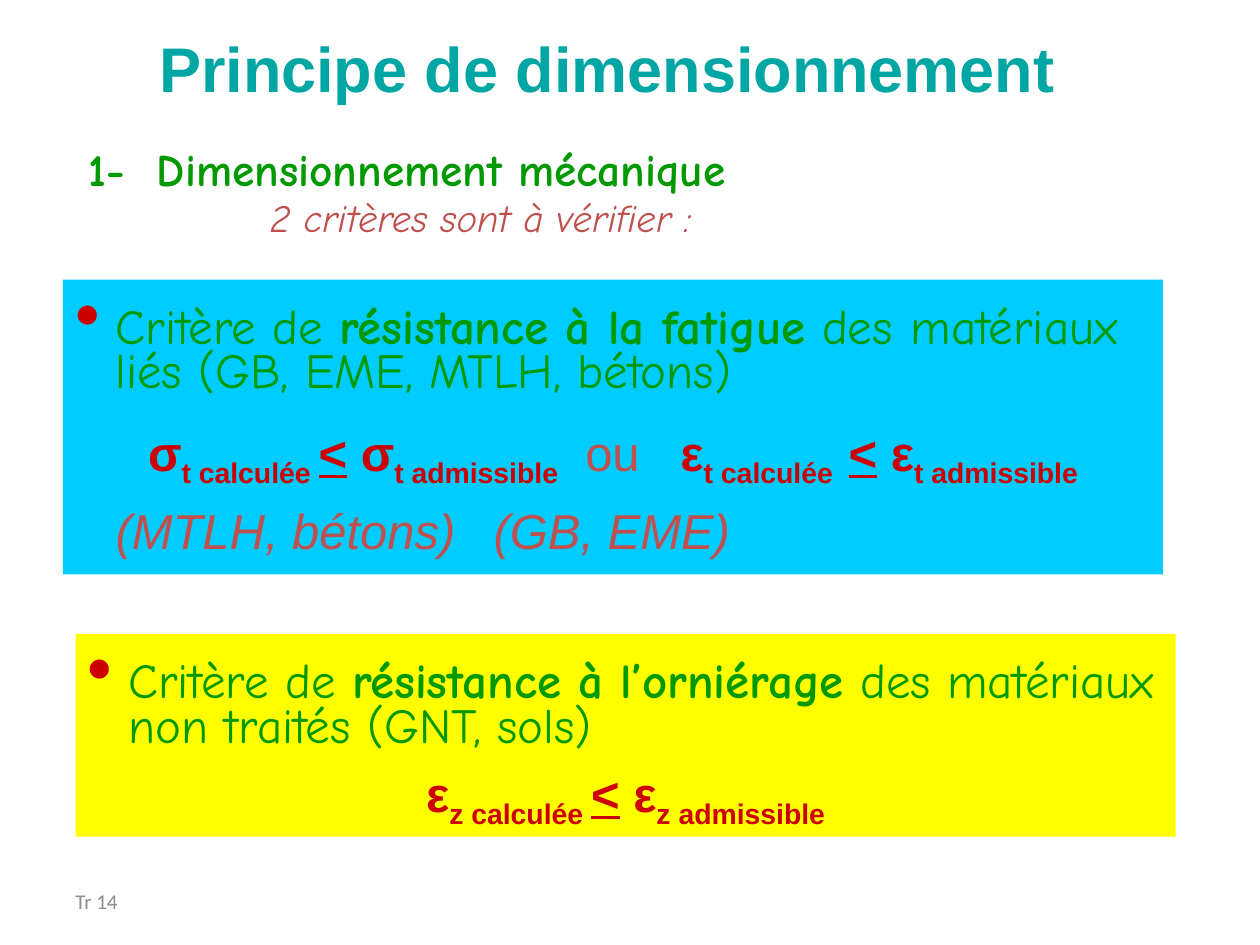
import dataclasses

import pptx
import pptx.dml.color
import pptx.enum.shapes
import pptx.enum.text
import pptx.oxml
import pptx.oxml.ns
import pptx.util

Pt = pptx.util.Pt
Align = pptx.enum.text.PP_ALIGN
Anchor = pptx.enum.text.MSO_ANCHOR


@dataclasses.dataclass(frozen=True)
class Theme:
    teal: str = "00A6A4"
    green: str = "009900"
    red: str = "CC0000"
    brick: str = "C0504D"
    grey: str = "8C8C8C"
    blue_panel: str = "00CCFF"
    yellow_panel: str = "FFFF00"
    heading_font: str = "Arial"
    text_font: str = "Comic Neue"
    footer_font: str = "Calibri"
    title_size: float = 36
    section_size: float = 25.9
    note_size: float = 22.2
    text_size: float = 28
    footer_size: float = 12


class SlideBuilder:
    def __init__(self, slide, theme):
        self.slide = slide
        self.theme = theme

    @staticmethod
    def color(value):
        return pptx.dml.color.RGBColor.from_string(value)

    @staticmethod
    def place(shape, left, top, width, height):
        shape.left, shape.top = Pt(left), Pt(top)
        shape.width, shape.height = Pt(width), Pt(height)

    @staticmethod
    def frame(shape, anchor=Anchor.TOP, inset_top=3.6, inset_side=7.2):
        frame = shape.text_frame
        frame.word_wrap = True
        frame.auto_size = pptx.enum.text.MSO_AUTO_SIZE.NONE
        frame.vertical_anchor = anchor
        frame.margin_left = frame.margin_right = Pt(inset_side)
        frame.margin_top, frame.margin_bottom = Pt(inset_top), Pt(3.6)
        return frame

    def paragraph(self, frame, align=Align.LEFT, spacing=1.0, before=0,
                  margin=0, hanging=0, bullet=False, tab=None):
        """Start a paragraph, reusing the empty first one."""
        first = frame.paragraphs[0]
        paragraph = frame.add_paragraph() if first.runs else first
        paragraph.alignment = align
        paragraph.line_spacing = spacing
        paragraph.space_before = Pt(before)
        properties = paragraph._p.get_or_add_pPr()
        properties.set("marL", str(Pt(margin)))
        properties.set("indent", str(-Pt(hanging)))
        marks = ["<a:buNone {0}/>"]
        if bullet:
            marks = ['<a:buClr {0}><a:srgbClr val="%s"/></a:buClr>' % self.theme.red,
                     '<a:buSzPct {0} val="150000"/>', '<a:buChar {0} char="•"/>']
        if tab:
            marks.append('<a:tabLst {0}><a:tab pos="%d" algn="l"/></a:tabLst>' % Pt(tab))
        for mark in marks:
            properties.append(pptx.oxml.parse_xml(mark.format(pptx.oxml.ns.nsdecls("a"))))
        return paragraph

    def run(self, paragraph, text, font, size, color, bold=False, italic=False,
            underline=False, subscript=False):
        run = paragraph.add_run()
        run.text = text
        run.font.name, run.font.size = font, Pt(size)
        run.font.color.rgb = self.color(color)
        run.font.bold, run.font.italic = bold, italic
        run.font.underline = underline
        if subscript:
            run._r.get_or_add_rPr().set("baseline", "-25000")

    def title(self, text):
        theme = self.theme
        shape = self.slide.shapes.title
        self.place(shape, 23, 9.4, 648, 90)
        paragraph = self.paragraph(self.frame(shape, inset_top=7.2), Align.CENTER)
        self.run(paragraph, text, theme.heading_font, theme.title_size, theme.teal, bold=True)

    def section(self, heading, note):
        theme = self.theme
        shape = self.slide.placeholders[1]
        self.place(shape, 43.2, 82.8, 617.8, 61.2)
        frame = self.frame(shape)
        paragraph = self.paragraph(frame, spacing=0.8)
        self.run(paragraph, heading, theme.text_font, theme.section_size, theme.green, bold=True)
        paragraph = self.paragraph(frame, spacing=0.8, before=4.4, margin=104)
        self.run(paragraph, note, theme.text_font, theme.note_size, theme.brick, italic=True)

    def panel(self, left, top, height, fill):
        shape = self.slide.shapes.add_shape(
            pptx.enum.shapes.MSO_SHAPE.RECTANGLE, Pt(left), Pt(top), Pt(628.6), Pt(height))
        shape.shadow.inherit = False
        shape.fill.solid()
        shape.fill.fore_color.rgb = self.color(fill)
        shape.line.fill.background()
        return self.frame(shape, inset_top=17)

    def criterion(self, frame, start, strong, end):
        theme = self.theme
        paragraph = self.paragraph(frame, spacing=0.75, margin=23, hanging=23, bullet=True)
        for text, bold in ((start, False), (strong, True), (end, False)):
            self.run(paragraph, text, theme.text_font, theme.text_size, theme.green, bold=bold)

    def inequality(self, paragraph, symbol, index, gap=" "):
        """Write: computed value <= admissible value."""
        for text, style in ((symbol, {}),
                            (f"{index} calculée{gap}", {"subscript": True}),
                            ("<", {"underline": True}),
                            (f" {symbol}", {}),
                            (f"{index} admissible", {"subscript": True})):
            self.run(paragraph, text, self.theme.heading_font, self.theme.text_size,
                     self.theme.red, bold=True, **style)

    def plain(self, paragraph, text, italic=False):
        self.run(paragraph, text, self.theme.heading_font, self.theme.text_size,
                 self.theme.brick, italic=italic)

    def footer(self, text):
        theme = self.theme
        shape = self.slide.shapes.add_textbox(Pt(36), Pt(500.4), Pt(168), Pt(28.8))
        paragraph = self.paragraph(self.frame(shape, Anchor.MIDDLE))
        self.run(paragraph, text, theme.footer_font, theme.footer_size, theme.grey)


def main():
    presentation = pptx.Presentation()
    presentation.slide_width, presentation.slide_height = Pt(720), Pt(540)
    slide = presentation.slides.add_slide(presentation.slide_layouts[1])
    theme = Theme()
    builder = SlideBuilder(slide, theme)

    # Headings
    builder.title("Principe de dimensionnement")
    builder.section("1-  Dimensionnement mécanique", "2 critères sont à vérifier :")

    # Fatigue criterion
    frame = builder.panel(36, 159.8, 168.5, theme.blue_panel)
    builder.criterion(frame, "Critère de ", "résistance à la fatigue",
                      " des\t matériaux liés (GB, EME, MTLH, bétons)")
    paragraph = builder.paragraph(frame, Align.CENTER, spacing=1.2, before=6.5,
                                  margin=23, hanging=23)
    builder.inequality(paragraph, "σ", "t")
    builder.plain(paragraph, "  ou   ")
    builder.inequality(paragraph, "ε", "t", gap="  ")
    paragraph = builder.paragraph(frame, before=6.5, margin=23, tab=384)
    builder.plain(paragraph, "(MTLH, bétons)\t(GB, EME)", italic=True)

    # Rutting criterion
    frame = builder.panel(43.2, 362.2, 115.9, theme.yellow_panel)
    builder.criterion(frame, "Critère de ", "résistance à l’orniérage",
                      " des matériaux non traités (GNT, sols)")
    paragraph = builder.paragraph(frame, Align.CENTER, before=6.5, margin=23, hanging=23)
    builder.inequality(paragraph, "ε", "z")

    # Page mark
    builder.footer("Tr 14")

    presentation.save("out.pptx")


if __name__ == "__main__":
    main()
